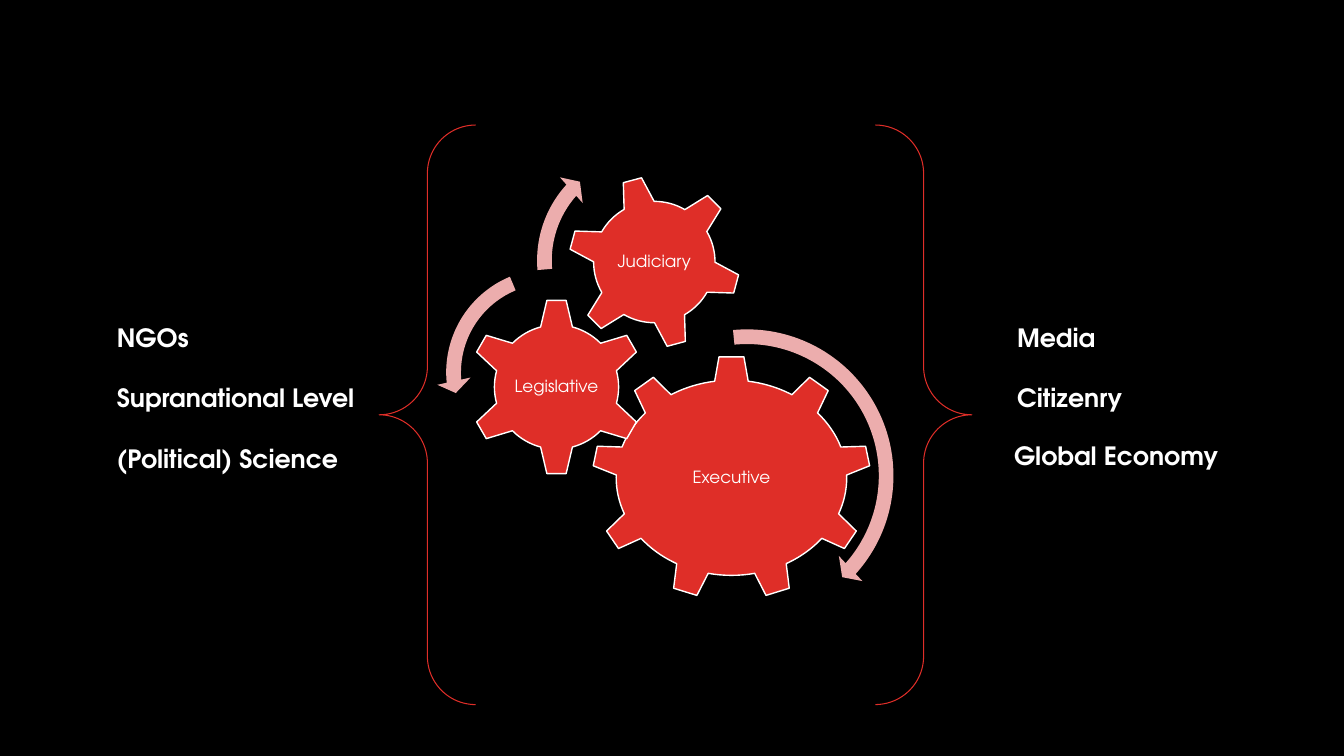
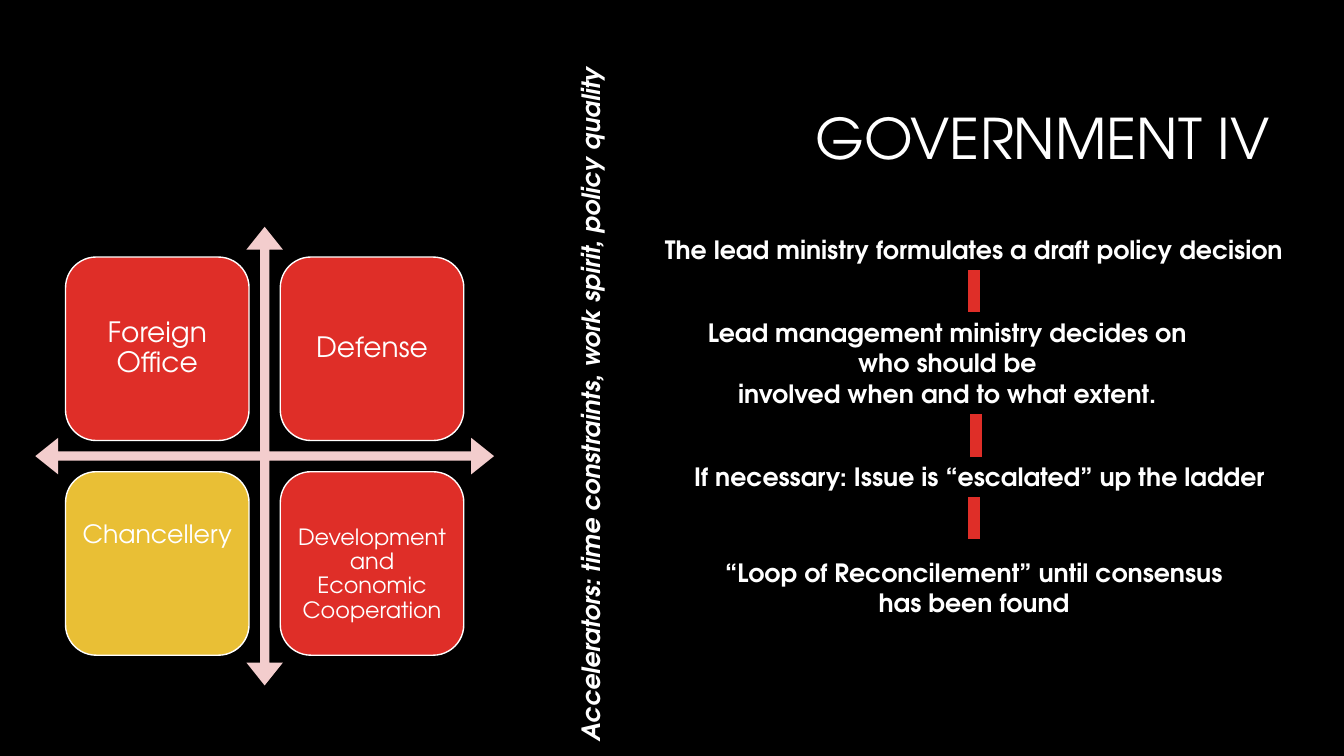
import pptx
import pptx.util
import pptx.dml.color
import pptx.enum.shapes
import pptx.enum.text
import pptx.oxml.ns
import lxml.etree

PX = 9144
FACE = "TeX Gyre Adventor"
HUES = {
    "black": "000000", "white": "FFFFFF", "red": "DF2E28",
    "gold": "E9BF35", "rose": "ECADAD", "pale": "F3CDCD",
}
KIND = pptx.enum.shapes.MSO_SHAPE
SIDE = pptx.enum.text.PP_ALIGN
MID = pptx.enum.text.MSO_ANCHOR.MIDDLE
TOP = pptx.enum.text.MSO_ANCHOR.TOP

BOLD = {"size": 18, "bold": True}
SLANT = {"size": 18, "bold": True, "italic": True}

GEARS = [
    ("Executive", KIND.GEAR_9, (587, 353, 277, 242), 0),
    ("Legislative", KIND.GEAR_6, (464, 296, 176, 176), 0),
    ("Judiciary", KIND.GEAR_6, (563, 174, 172, 172), 345),
]
TURNS = [
    (KIND.CIRCULAR_ARROW, (586, 317, 310, 310), (0.047, 2.99, 25.121, 158.701, 0.055)),
    (KIND.LEFT_CIRCULAR_ARROW, (433, 257, 225, 225), (0.065, 4.3, 104.891, 148.378, 0.075)),
    (KIND.CIRCULAR_ARROW, (523, 137, 243, 243), (0.06, 3.941, 133.138, 105.082, 0.07)),
]
BRACE = (376, 124, 588, 575)
FORCES = [
    ("NGOs", (106, 315, 115, 40)),
    ("Supranational Level", (106, 374, 271, 40)),
    ("(Political) Science", (106, 435, 310, 40)),
    ("Media", (999, 315, 160, 40)),
    ("Citizenry", (999, 374, 160, 40)),
    ("Global Economy", (996, 432, 293, 40)),
]

TITLE = ("GOVERNMENT IV", (327, 70, 942, 141))
CROSS = (35, 225, 455, 455)
CARDS = [
    ("Foreign Office", "red", 20, (8, 8, 8, 8)),
    ("Defense", "red", 20, (8, 8, 8, 8)),
    ("Chancellery", "gold", 18, (7, 7, 7, 63)),
    ("Development and Economic Cooperation", "red", 16, (7, 29, 7, 7)),
]
CARD, PITCH, LEFT, HEAD = 182, 213, 65, 255
STEPS = [
    ("The lead ministry formulates a draft policy decision", (647, 228, 638, 40)),
    ("Lead management ministry decides on\nwho should be\ninvolved when and to what extent.",
     (672, 310, 535, 101)),
    ("If necessary: Issue is “escalated” up the ladder", (676, 453, 591, 40)),
    ("“Loop of Reconcilement” until consensus\nhas been found", (704, 548, 524, 71)),
]
LINKS = [(966, 268), (968, 411), (966, 493)]
REACH = 42
SPINE = ("Accelerators: time constraints, work spirit, policy quality", (237, 381, 698, 40))


def emu(box):
    return [pptx.util.Emu(n * PX) for n in box]


def rgb(hue):
    return pptx.dml.color.RGBColor.from_string(HUES[hue])


def apply(item, looks):
    for name, value in looks.items():
        setattr(item, name, value)


def write(frame, text, looks, side=SIDE.LEFT, pitch=1.0, wrap=False, seat=TOP, pads=None):
    apply(frame, {"word_wrap": wrap, "vertical_anchor": seat})
    if pads:
        names = ("margin_left", "margin_top", "margin_right", "margin_bottom")
        apply(frame, dict(zip(names, emu(pads))))
    para = frame.paragraphs[0]
    para.text = text
    apply(para, {"alignment": side, "line_spacing": pitch})
    for run in para.runs:
        apply(run.font, {**looks, "name": FACE, "size": pptx.util.Pt(looks["size"])})
        run.font.color.rgb = rgb("white")


def label(slide, text, box, looks, turn=0, **form):
    item = slide.shapes.add_textbox(*emu(box))
    item.rotation = turn
    write(item.text_frame, text, looks, **form)


def draw(slide, kind, box, fill=None, edge=None, width=1, turn=0, bends=()):
    item = slide.shapes.add_shape(kind, *emu(box))
    item.shadow.inherit = False
    item.rotation = turn
    for i, bend in enumerate(bends):
        item.adjustments[i] = bend
    if fill:
        item.fill.solid()
        item.fill.fore_color.rgb = rgb(fill)
    else:
        item.fill.background()
    if edge:
        item.line.color.rgb = rgb(edge)
        item.line.width = pptx.util.Pt(width)
    else:
        item.line.fill.background()
    return item


def link(slide, x, y):
    kind = pptx.enum.shapes.MSO_CONNECTOR.STRAIGHT
    item = slide.shapes.add_connector(kind, *emu((x, y, x, y + REACH)))
    item.line.color.rgb = rgb("red")
    item.line.width = pptx.util.Pt(8)
    lxml.etree.SubElement(item._element.spPr, pptx.oxml.ns.qn("a:effectLst"))


def powers(deck):
    slide = deck.slides.add_slide(deck.slide_layouts[6])
    for text, kind, box, turn in GEARS:
        draw(slide, kind, box, "red", "white", turn=turn)
        label(slide, text, box, {"size": 12}, side=SIDE.CENTER, pitch=0.9,
              seat=MID, pads=(2, 2, 2, 2))
    for kind, box, bends in TURNS:
        draw(slide, kind, box, "rose", bends=bends)
    draw(slide, KIND.DOUBLE_BRACE, BRACE, edge="red", width=0.75)
    for text, box in FORCES:
        label(slide, text, box, BOLD)


def process(deck):
    slide = deck.slides.add_slide(deck.slide_layouts[5])
    text, box = TITLE
    title = slide.shapes.title
    apply(title, dict(zip(("left", "top", "width", "height"), emu(box))))
    write(title.text_frame, text, {"size": 40}, side=SIDE.RIGHT, pitch=0.9,
          wrap=True, seat=MID)

    draw(slide, KIND.QUAD_ARROW, CROSS, "pale", bends=(0.02, 0.04, 0.05))
    for i, (text, fill, size, pads) in enumerate(CARDS):
        row, col = divmod(i, 2)
        box = (LEFT + col * PITCH, HEAD + row * PITCH, CARD, CARD)
        card = draw(slide, KIND.ROUNDED_RECTANGLE, box, fill, "white")
        write(card.text_frame, text, {"size": size}, side=SIDE.CENTER, pitch=0.9,
              wrap=True, seat=MID, pads=pads)

    for text, box in STEPS:
        label(slide, text, box, BOLD, side=SIDE.CENTER)
    for x, y in LINKS:
        link(slide, x, y)
    label(slide, *SPINE, SLANT, turn=270, side=SIDE.CENTER)


def main():
    deck = pptx.Presentation()
    deck.slide_width, deck.slide_height = emu((1333, 750))
    back = deck.slide_master.background.fill
    back.solid()
    back.fore_color.rgb = rgb("black")
    powers(deck)
    process(deck)
    deck.save("out.pptx")


if __name__ == "__main__":
    main()
